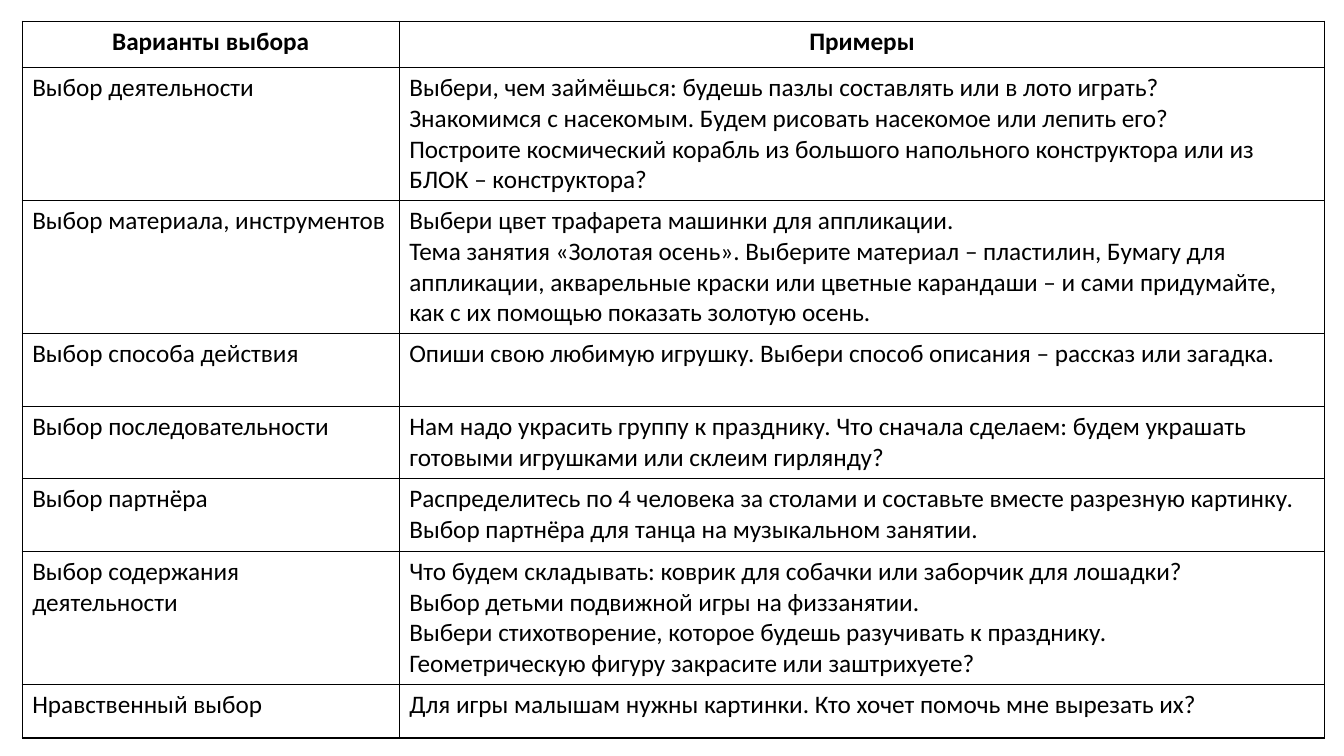
"""Build a slide with a table of the kinds of choice offered to children and examples."""
from dataclasses import dataclass

from lxml import etree
from pptx import Presentation
from pptx.dml.color import RGBColor
from pptx.enum.text import PP_ALIGN
from pptx.oxml.ns import qn
from pptx.table import _Cell
from pptx.util import Inches, Pt

BLACK = RGBColor(0, 0, 0)
WHITE = RGBColor(255, 255, 255)
CENTER, LEFT = PP_ALIGN.CENTER, PP_ALIGN.LEFT
FONT = "Calibri"
COLUMN_WIDTHS = (3.74, 9.18)
HEADER_HEIGHT, SHORT, TALL, LAST_HEIGHT = 0.46, 0.72, 1.27, 0.53


@dataclass(frozen=True)
class ChoiceRow:
    """One table row: its height, the kind of choice and the example paragraphs."""
    height: float
    choice: str
    examples: tuple[str, ...]
    header: bool = False


ROWS = (
    ChoiceRow(HEADER_HEIGHT, "Варианты выбора", ("Примеры",), header=True),
    ChoiceRow(TALL, "Выбор деятельности", (
        "Выбери, чем займёшься: будешь пазлы составлять или в лото играть?",
        "Знакомимся с насекомым. Будем рисовать насекомое или лепить его?",
        "Построите космический корабль из большого напольного конструктора "
        "или из БЛОК – конструктора?",
    )),
    ChoiceRow(TALL, "Выбор материала, инструментов", (
        "Выбери цвет трафарета машинки для аппликации.",
        "Тема занятия «Золотая осень». Выберите материал – пластилин, Бумагу "
        "для аппликации, акварельные краски или цветные карандаши – и сами "
        "придумайте, как с их помощью показать золотую осень.",
    )),
    ChoiceRow(SHORT, "Выбор способа действия", (
        "Опиши свою любимую игрушку. Выбери способ описания – рассказ или загадка.",
    )),
    ChoiceRow(SHORT, "Выбор последовательности", (
        "Нам надо украсить группу к празднику. Что сначала сделаем: будем "
        "украшать готовыми игрушками или склеим гирлянду?",
    )),
    ChoiceRow(SHORT, "Выбор партнёра", (
        "Распределитесь по 4 человека за столами и составьте вместе разрезную картинку.",
        "Выбор партнёра для танца на музыкальном занятии.",
    )),
    ChoiceRow(TALL, "Выбор содержания деятельности", (
        "Что будем складывать: коврик для собачки или заборчик для лошадки?",
        "Выбор детьми подвижной игры на физзанятии.",
        "Выбери стихотворение, которое будешь разучивать к празднику.",
        "Геометрическую фигуру закрасите или заштрихуете?",
    )),
    ChoiceRow(LAST_HEIGHT, "Нравственный выбор", (
        "Для игры малышам нужны картинки. Кто хочет помочь мне вырезать их?",
    )),
)


def set_borders(cell: _Cell) -> None:
    """Give all four sides of a cell a thin black line."""
    tc_pr = cell._tc.get_or_add_tcPr()
    for side in ("a:lnL", "a:lnR", "a:lnT", "a:lnB"):
        ln = etree.SubElement(tc_pr, qn(side), w=str(Pt(1)))
        fill = etree.SubElement(ln, qn("a:solidFill"))
        etree.SubElement(fill, qn("a:srgbClr"), val=str(BLACK))


def fill_cell(cell: _Cell, paragraphs: tuple[str, ...], header: bool) -> None:
    """Format a cell and write its paragraphs."""
    set_borders(cell)
    cell.fill.solid()
    cell.fill.fore_color.rgb = WHITE
    tf = cell.text_frame
    for i, text in enumerate(paragraphs):
        p = tf.add_paragraph() if i else tf.paragraphs[0]
        p.alignment = CENTER if header else LEFT
        r = p.add_run()
        r.text = text
        r.font.name = FONT
        r.font.size = Pt(18)
        r.font.bold = header
        r.font.color.rgb = BLACK


def main() -> None:
    """Create the presentation and save it."""
    prs = Presentation()
    prs.slide_width, prs.slide_height = Inches(13.33), Inches(7.5)
    s = prs.slides.add_slide(prs.slide_layouts[6])
    height = sum(row.height for row in ROWS)
    table = s.shapes.add_table(
        len(ROWS), len(COLUMN_WIDTHS), Inches(0.22), Inches(0.21),
        Inches(sum(COLUMN_WIDTHS)), Inches(height)).table
    table.horz_banding = False
    for column, width in zip(table.columns, COLUMN_WIDTHS):
        column.width = Inches(width)
    for i, row in enumerate(ROWS):
        table.rows[i].height = Inches(row.height)
        fill_cell(table.cell(i, 0), (row.choice,), row.header)
        fill_cell(table.cell(i, 1), row.examples, row.header)
    prs.save("out.pptx")


if __name__ == "__main__":
    main()
